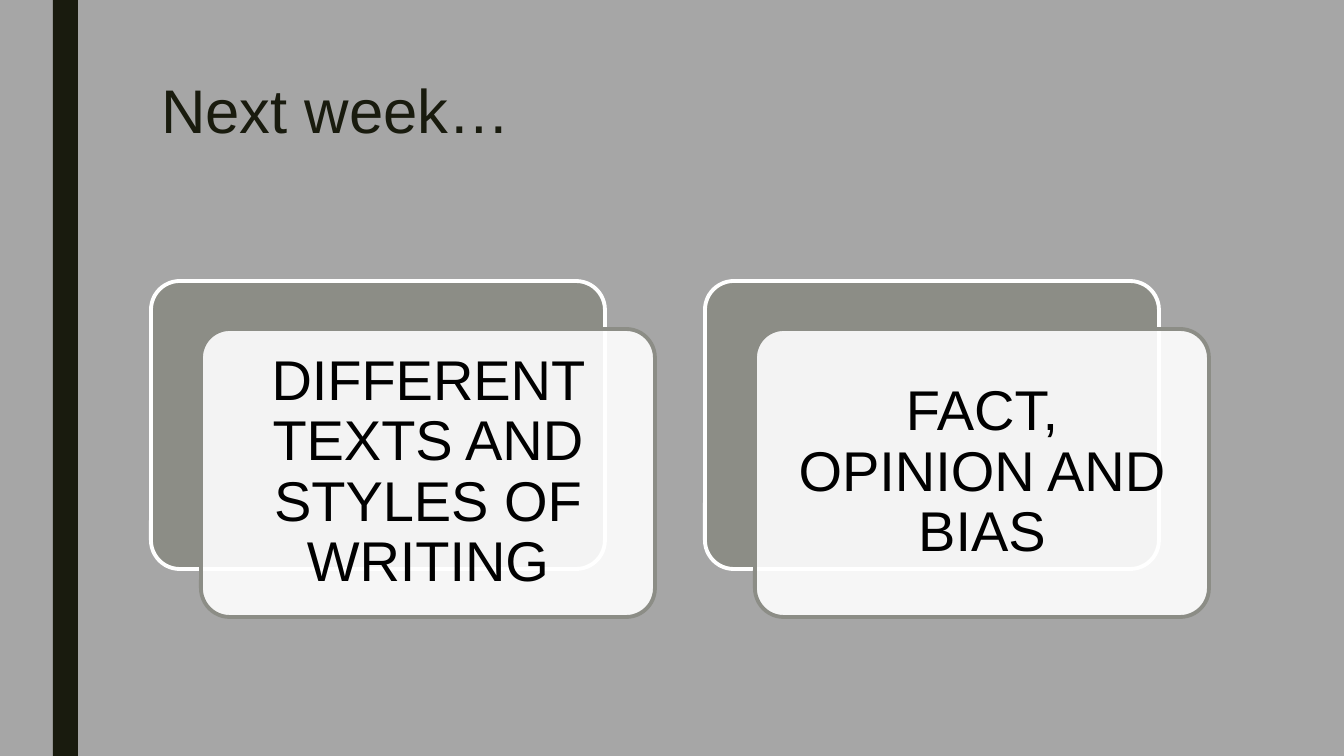
from lxml import etree
from pptx import Presentation
from pptx import util as u
from pptx.dml.color import RGBColor
from pptx.enum import shapes, text
from pptx.oxml.ns import qn

# Content
TITLE = "Next week…"
TOPICS = ["DIFFERENT TEXTS AND STYLES OF WRITING", "FACT, OPINION AND BIAS"]

# Colours and layout, in px
GREY, DARK, OLIVE, WHITE, BLACK = "A6A6A6", "191B0E", "8C8D86", "FFFFFF", "000000"
SLIDE_W, SLIDE_H = 1344, 756
BAR = (53, 0, 25, SLIDE_H)
TITLE_BOX = (151, 76, 1058, 163)
CARD_LEFT, CARD_TOP, CARD_W, CARD_H = 151, 281, 454, 288
CARD_STEP, SHIFT_X, SHIFT_Y = 554, 50, 48
CARD_INSET = 25


def px(value):
    return u.Emu(round(value * 914400 / 100.8))


def color(value):
    return RGBColor.from_string(value)


def add_box(page, kind, frame, fill, line=None, opacity=None):
    box = page.shapes.add_shape(kind, *map(px, frame))
    box.shadow.inherit = False
    box.fill.solid()
    box.fill.fore_color.rgb = color(fill)
    if opacity is not None:
        tint = box.fill._xPr.find(".//" + qn("a:srgbClr"))
        etree.SubElement(tint, qn("a:alpha")).set("val", str(opacity * 1000))
    if line:
        box.line.color.rgb = color(line)
        box.line.width = u.Pt(2.75)
    else:
        box.line.fill.background()
    return box


def write(box, words, *, size, ink, align, anchor, spacing, inset=None):
    frame = box.text_frame
    frame.word_wrap = True
    frame.auto_size = text.MSO_AUTO_SIZE.NONE
    frame.vertical_anchor = anchor
    if inset is not None:
        frame.margin_left = frame.margin_right = px(inset)
        frame.margin_top = frame.margin_bottom = px(inset)
    para = frame.paragraphs[0]
    para.alignment = align
    para.line_spacing = spacing
    span = para.add_run()
    span.text = words
    span.font.name = "Arial"
    span.font.size = u.Pt(size)
    span.font.color.rgb = color(ink)


def main():
    deck = Presentation()
    deck.slide_width, deck.slide_height = px(SLIDE_W), px(SLIDE_H)
    page = deck.slides.add_slide(deck.slide_layouts[5])
    page.background.fill.solid()
    page.background.fill.fore_color.rgb = color(GREY)

    # Side bar and title
    add_box(page, shapes.MSO_SHAPE.RECTANGLE, BAR, DARK)
    title = page.shapes.title
    title.left, title.top, title.width, title.height = map(px, TITLE_BOX)
    write(title, TITLE, size=44, ink=DARK, align=text.PP_ALIGN.LEFT,
          anchor=text.MSO_ANCHOR.TOP, spacing=0.89)

    # Topic cards, each over a shifted backing
    rounded = shapes.MSO_SHAPE.ROUNDED_RECTANGLE
    for index, topic in enumerate(TOPICS):
        left = CARD_LEFT + index * CARD_STEP
        back = add_box(page, rounded, (left, CARD_TOP, CARD_W, CARD_H), OLIVE, WHITE)
        card = add_box(page, rounded,
                       (left + SHIFT_X, CARD_TOP + SHIFT_Y, CARD_W, CARD_H),
                       WHITE, OLIVE, opacity=90)
        back.adjustments[0] = card.adjustments[0] = 0.1
        write(card, topic, size=40, ink=BLACK, align=text.PP_ALIGN.CENTER,
              anchor=text.MSO_ANCHOR.MIDDLE, spacing=0.9, inset=CARD_INSET)

    deck.save("out.pptx")


if __name__ == "__main__":
    main()
